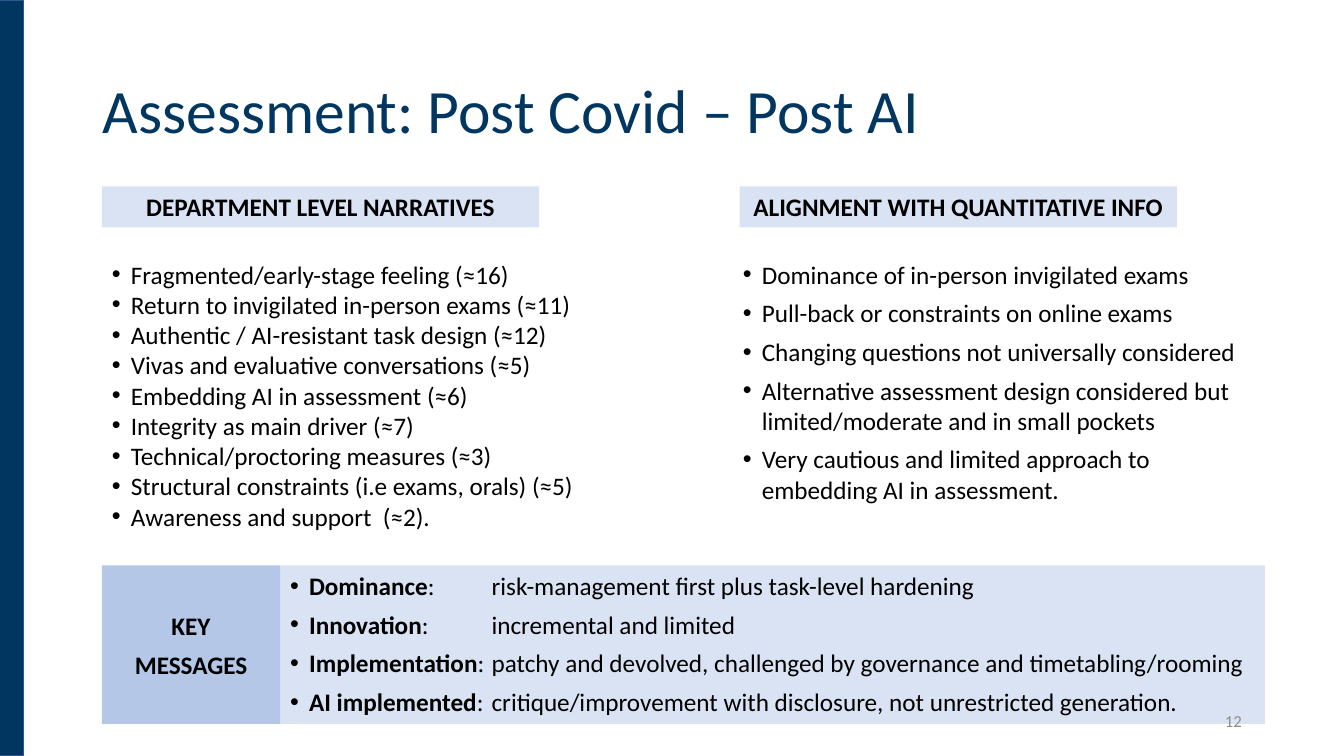
"""Build the slide on assessment after Covid and AI."""
from lxml.etree import SubElement
from pptx import Presentation
from pptx.dml.color import RGBColor as Rgb
from pptx.enum.shapes import MSO_SHAPE as Kind
from pptx.enum.text import MSO_ANCHOR as Anchor, PP_ALIGN as Align
from pptx.oxml.ns import qn
from pptx.util import Cm, Pt

NAVY, PALE, MID, BLACK = "00365F", "DAE3F3", "B4C7E7", "000000"
LEFT, RIGHT = 2.57, 18.64

deck = Presentation()
deck.slide_width, deck.slide_height = Cm(33.87), Cm(19.05)
slide = deck.slides.add_slide(deck.slide_layouts[6])


def add_box(place, lines, fill=None, size=18, color=BLACK, bold=False,
            align=Align.LEFT, anchor=Anchor.TOP, gap=0):
    """Add a text box, or a filled rectangle, with one paragraph a line."""
    place = [Cm(n) for n in place]
    if fill:
        box = slide.shapes.add_shape(Kind.RECTANGLE, *place)
        box.shadow.inherit = False
        box.fill.solid()
        box.fill.fore_color.rgb = Rgb.from_string(fill)
        box.line.fill.background()
    else:
        box = slide.shapes.add_textbox(*place)
    frame = box.text_frame
    frame.word_wrap = True
    frame.vertical_anchor = anchor
    frame.text = "\n".join(lines)
    for par in frame.paragraphs:
        par.alignment = align
        par.space_after = Pt(gap)
        for run in par.runs:
            font = run.font
            font.name, font.size, font.bold = "Calibri", Pt(size), bold
            font.color.rgb = Rgb.from_string(color)
    return box


def add_dots(box, tab=None):
    """Give each paragraph a bullet and, if asked, a tab stop."""
    for par in box.text_frame.paragraphs:
        props = par._p.get_or_add_pPr()
        props.set("marL", str(Cm(0.48)))
        props.set("indent", str(-Cm(0.48)))
        SubElement(props, qn("a:buFont"), typeface="Arial")
        SubElement(props, qn("a:buChar"), char="•")
        if tab:
            stops = SubElement(props, qn("a:tabLst"))
            SubElement(stops, qn("a:tab"), pos=str(Cm(tab)), algn="l")


bar = add_box((-0.1, 0, 0.69, 19.05), [""], NAVY)
bar.line.color.rgb = Rgb.from_string("325491")
bar.line.width = Pt(1)

title = add_box((2.34, 1.02, 29.21, 3.68), ["Assessment: Post Covid – Post AI"],
                size=44, color=NAVY, anchor=Anchor.MIDDLE)
title.text_frame.paragraphs[0].line_spacing = 0.9

for left, head in ((LEFT, "DEPARTMENT LEVEL NARRATIVES"),
                   (RIGHT, "ALIGNMENT WITH QUANTITATIVE INFO")):
    add_box((left, 4.7, 11.02, 1.03), [head], PALE, bold=True, align=Align.CENTER)

themes = [
    "Fragmented/early-stage feeling (≈16)",
    "Return to invigilated in-person exams (≈11)",
    "Authentic / AI-resistant task design (≈12)",
    "Vivas and evaluative conversations (≈5)",
    "Embedding AI in assessment (≈6)",
    "Integrity as main driver (≈7)",
    "Technical/proctoring measures (≈3)",
    "Structural constraints (i.e exams, orals) (≈5)",
    "Awareness and support  (≈2).",
]
add_dots(add_box((LEFT, 6.4, 12.29, 7.95), themes))

trends = [
    "Dominance of in-person invigilated exams",
    "Pull-back or constraints on online exams",
    "Changing questions not universally considered",
    "Alternative assessment design considered but limited/moderate and in small pockets",
    "Very cautious and limited approach to embedding AI in assessment.",
]
add_dots(add_box((18.47, 6.4, 13.82, 6.5), trends, gap=6))

points = {
    "Dominance": "risk-management first plus task-level hardening",
    "Innovation": "incremental and limited",
    "Implementation": "patchy and devolved, challenged by governance and timetabling/rooming",
    "AI implemented": "critique/improvement with disclosure, not unrestricted generation.",
}
panel = add_box((7.06, 14.25, 24.82, 3.99), points, PALE, bold=True, gap=6)
add_dots(panel, tab=5.08)
for par, note in zip(panel.text_frame.paragraphs, points.values()):
    run = par.add_run()
    run.text = f":\t{note}"
    run.font.name, run.font.size, run.font.bold = "Calibri", Pt(18), False
    run.font.color.rgb = Rgb.from_string(BLACK)

add_box((LEFT, 14.25, 4.49, 3.99), ["KEY", "MESSAGES"], MID, bold=True,
        align=Align.CENTER, anchor=Anchor.MIDDLE, gap=6)
add_box((23.93, 17.65, 7.62, 1.02), ["12"], size=12, color="8C8C8C",
        align=Align.RIGHT, anchor=Anchor.MIDDLE)

deck.save("out.pptx")
